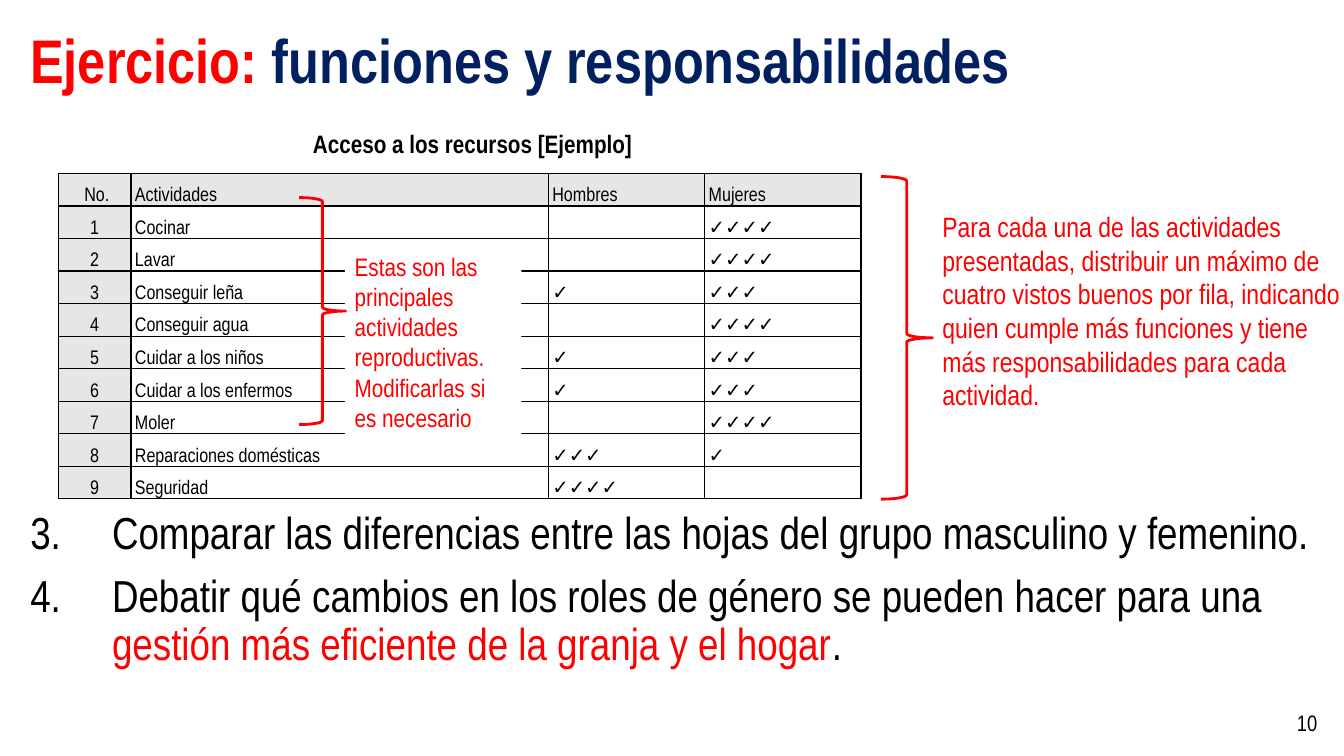
from lxml import etree
from pptx import Presentation
from pptx.dml.color import RGBColor
from pptx.enum.shapes import MSO_SHAPE
from pptx.enum.text import MSO_ANCHOR, MSO_AUTO_SIZE, PP_ALIGN
from pptx.oxml.ns import qn
from pptx.util import Cm, Pt

LEFT, CENTER, RIGHT = PP_ALIGN.LEFT, PP_ALIGN.CENTER, PP_ALIGN.RIGHT
TOP, MIDDLE, BOTTOM = MSO_ANCHOR.TOP, MSO_ANCHOR.MIDDLE, MSO_ANCHOR.BOTTOM
BRACE, RECTANGLE = MSO_SHAPE.RIGHT_BRACE, MSO_SHAPE.RECTANGLE
FONT = "Arial Narrow"
RED, NAVY, BLACK, GRAY, WHITE = "FF0000", "002060", "000000", "E7E6E6", "FFFFFF"

# A paragraph is a list of (text, colour) runs.
TITLE = [[("Ejercicio: ", RED), ("funciones y responsabilidades", NAVY)]]
STEPS = [
    [("Comparar las diferencias entre las hojas del grupo masculino y femenino.", BLACK)],
    [("Debatir qué cambios en los roles de género se pueden hacer para una ", BLACK),
     ("gestión más eficiente de la granja y el hogar", RED), (".", BLACK)],
]
FIRST_STEP = 3
CAPTION = [[("Acceso a los recursos [Ejemplo]", BLACK)]]
TICKS_NOTE = [[("Para cada una de las actividades presentadas, distribuir un máximo de "
                "cuatro vistos buenos por fila, indicando quien cumple más funciones y "
                "tiene más responsabilidades para cada actividad.", RED)]]
ACTIVITIES_NOTE = [[("Estas son las principales actividades reproductivas. "
                     "Modificarlas si es necesario", RED)]]
PAGE_NUMBER = [[("10", BLACK)]]

HEADER = ("\u00a0No.", "Actividades", "Hombres", "Mujeres")
ACTIVITIES = [  # activity, ticks for men, ticks for women
    ("Cocinar", 0, 4),
    ("Lavar", 0, 4),
    ("Conseguir leña", 1, 3),
    ("Conseguir agua", 0, 4),
    ("Cuidar a los niños", 1, 3),
    ("Cuidar a los enfermos", 1, 3),
    ("Moler", 0, 4),
    ("Reparaciones domésticas", 3, 1),
    ("Seguridad", 4, 0),
]
COLUMN_WIDTHS = (1.83, 10.52, 3.94, 3.94)
ROW_HEIGHT = 0.82


def color(value):
    return RGBColor.from_string(value)


def apply(target, values):
    for name, value in values.items():
        setattr(target, name, value)


def place(shape, left, top, width, height):
    apply(shape, dict(left=Cm(left), top=Cm(top), width=Cm(width), height=Cm(height)))


def write(frame, paragraphs, size, bold=False, anchor=TOP, **paragraph_format):
    apply(frame, dict(word_wrap=True, auto_size=MSO_AUTO_SIZE.NONE, vertical_anchor=anchor))
    for index, runs in enumerate(paragraphs):
        paragraph = frame.add_paragraph() if index else frame.paragraphs[0]
        apply(paragraph, paragraph_format)
        for text, run_color in runs:
            run = paragraph.add_run()
            run.text = text
            apply(run.font, dict(name=FONT, size=Pt(size), bold=bold))
            run.font.color.rgb = color(run_color)


def number_from(paragraphs, start, indent):
    for paragraph in paragraphs:
        properties = paragraph._p.get_or_add_pPr()
        properties.set("marL", str(Cm(indent)))
        properties.set("indent", str(-Cm(indent)))
        etree.SubElement(properties, qn("a:buFont"), typeface="+mj-lt")
        etree.SubElement(properties, qn("a:buAutoNum"), type="arabicPeriod", startAt=str(start))


def add_text(slide, box, paragraphs, size, **text_format):
    shape = slide.shapes.add_textbox(*map(Cm, box))
    write(shape.text_frame, paragraphs, size, **text_format)


def add_brace(slide, box):
    brace = slide.shapes.add_shape(BRACE, *map(Cm, box))
    brace.shadow.inherit = False
    brace.fill.background()
    brace.line.color.rgb = color(RED)
    brace.line.width = Pt(2)


def fill_cell(cell, text, fill, align):
    apply(cell, dict(margin_left=Cm(0.1), margin_right=Cm(0.1), margin_top=Cm(0.02),
                     margin_bottom=0, vertical_anchor=BOTTOM))
    paragraph = cell.text_frame.paragraphs[0]
    paragraph.alignment = align
    run = paragraph.add_run()
    run.text = text
    apply(run.font, dict(name=FONT, size=Pt(14), bold=False))
    run.font.color.rgb = color(BLACK)
    properties = cell._tc.get_or_add_tcPr()
    for side in ("lnL", "lnR", "lnT", "lnB"):
        border = etree.SubElement(properties, qn(f"a:{side}"), w=str(Pt(1)))
        solid = etree.SubElement(border, qn("a:solidFill"))
        etree.SubElement(solid, qn("a:srgbClr"), val=BLACK)
    cell.fill.solid()
    cell.fill.fore_color.rgb = color(fill)


def add_activity_table(slide, left, top):
    rows = [HEADER] + [(str(number), activity, "✓" * men, "✓" * women)
                       for number, (activity, men, women) in enumerate(ACTIVITIES, 1)]
    table = slide.shapes.add_table(
        len(rows), len(HEADER), Cm(left), Cm(top),
        Cm(sum(COLUMN_WIDTHS)), Cm(ROW_HEIGHT * len(rows))).table
    for column, width in zip(table.columns, COLUMN_WIDTHS):
        column.width = Cm(width)
    for row_index, texts in enumerate(rows):
        table.rows[row_index].height = Cm(ROW_HEIGHT)
        for column_index, text in enumerate(texts):
            is_heading = row_index == 0 or column_index == 0
            fill_cell(table.cell(row_index, column_index), text,
                      GRAY if is_heading else WHITE, LEFT if column_index else CENTER)


def main():
    presentation = Presentation()
    presentation.slide_width, presentation.slide_height = Cm(33.87), Cm(19.05)
    slide = presentation.slides.add_slide(presentation.slide_layouts[1])
    title, body = slide.placeholders

    place(title, 0.51, -0.25, 31.27, 3.68)
    write(title.text_frame, TITLE, 44, bold=True, anchor=MIDDLE, alignment=LEFT,
          line_spacing=0.9)
    place(body, 0.51, 12.75, 32.94, 6.07)
    write(body.text_frame, STEPS, 32, line_spacing=0.9, space_before=Pt(10))
    number_from(body.text_frame.paragraphs, FIRST_STEP, 2.06)

    add_text(slide, (25.83, 17.7, 7.62, 1.02), PAGE_NUMBER, 16, anchor=MIDDLE, alignment=RIGHT)
    add_text(slide, (23.5, 5.16, 10.69, 6.25), TICKS_NOTE, 20)
    add_brace(slide, (22.2, 4.45, 1.3, 8.13))
    add_activity_table(slide, 1.47, 4.37)

    note = slide.shapes.add_shape(RECTANGLE, Cm(8.69), Cm(6.2), Cm(4.45), Cm(4.88))
    note.shadow.inherit = False
    note.fill.solid()
    note.fill.fore_color.rgb = color(WHITE)
    note.line.fill.background()
    write(note.text_frame, ACTIVITIES_NOTE, 18, alignment=LEFT)
    add_brace(slide, (7.54, 4.98, 1.17, 5.72))
    add_text(slide, (4.11, 3.1, 15.6, 1.02), CAPTION, 18, bold=True, alignment=CENTER)

    presentation.save("out.pptx")


if __name__ == "__main__":
    main()
